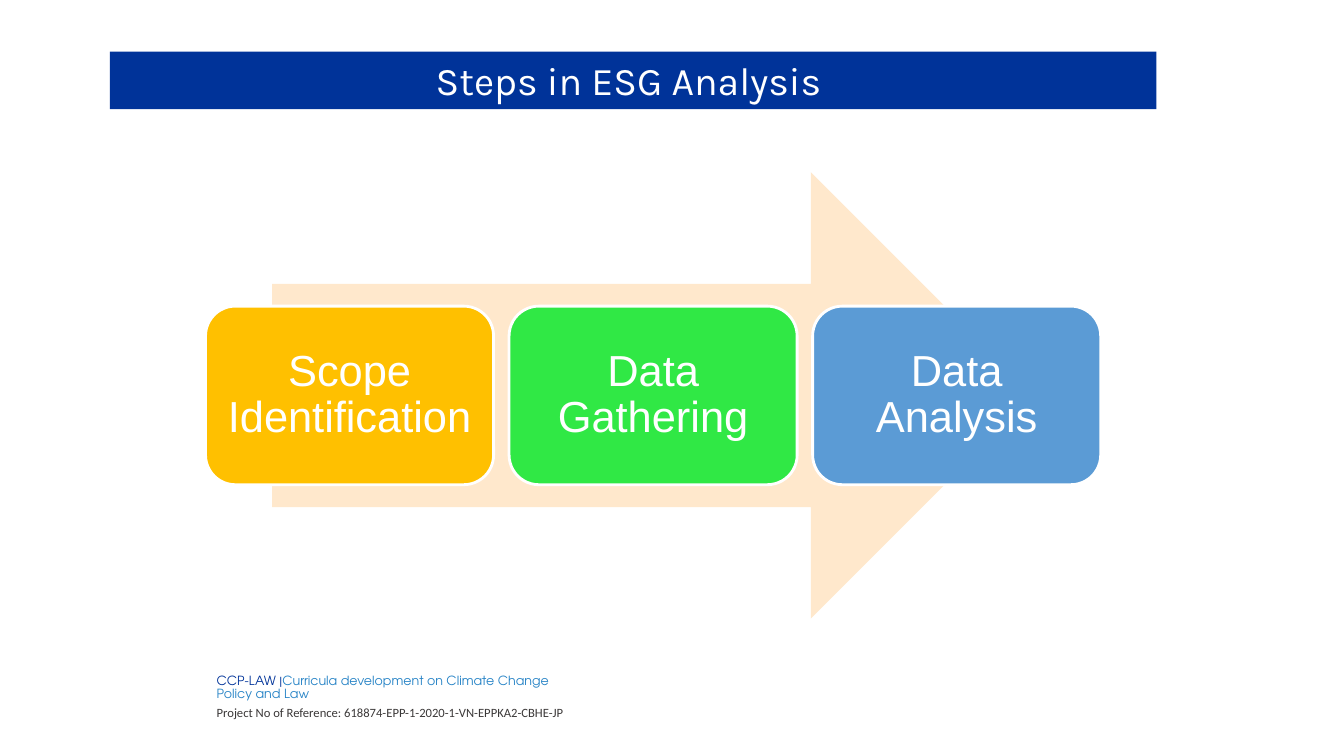
from pptx import Presentation
from pptx.dml.color import RGBColor
from pptx.enum.shapes import MSO_SHAPE
from pptx.enum.text import MSO_ANCHOR, MSO_AUTO_SIZE, PP_ALIGN
from pptx.util import Cm, Pt

ARROW, BOX = MSO_SHAPE.RIGHT_ARROW, MSO_SHAPE.ROUNDED_RECTANGLE
TOP, MIDDLE = MSO_ANCHOR.TOP, MSO_ANCHOR.MIDDLE
CENTER, NO_FIT = PP_ALIGN.CENTER, MSO_AUTO_SIZE.NONE

COLORS = {
    "navy": "003399", "blue": "2683C6", "gray": "3B3838", "white": "FFFFFF",
    "peach": "FFE8CC", "amber": "FFC000", "green": "30E845", "steel": "5B9BD5",
}
TITLE = "Steps in ESG Analysis "
STEPS = [
    ("Scope Identification", "amber"),
    ("Data Gathering", "green"),
    ("Data Analysis", "steel"),
]
FOOTER = [
    [("CCP-LAW |", "TeX Gyre Adventor", "navy"),
     ("Curricula development on Climate Change Policy and Law",
      "TeX Gyre Adventor", "blue")],
    [("Project No of Reference: 618874-EPP-1-2020-1-VN-EPPKA2-CBHE-JP",
      "Calibri", "gray")],
]

# Lengths in cm
TITLE_AT = (2.77, 1.3, 26.37, 1.45)
ARROW_AT = (6.86, 4.34, 19.2, 11.25)
FOOTER_AT = (3.3, 16.94, 11.48, 1.32)
FOOTER_COLS = (1.98, 9.5)
STEP_LEFT, STEP_W, STEP_H, STEP_PITCH = 5.18, 7.26, 4.5, 7.65


def rgb(name):
    return RGBColor.from_string(COLORS[name])


def set_attrs(obj, values):
    for name, value in values.items():
        setattr(obj, name, value)


def fill(obj, color):
    obj.fill.solid()
    obj.fill.fore_color.rgb = rgb(color)


def margins(x, y):
    return {"margin_left": Cm(x), "margin_right": Cm(x),
            "margin_top": Cm(y), "margin_bottom": Cm(y)}


def add_run(p, text, font, size, color):
    r = p.add_run()
    r.text = text
    set_attrs(r.font, {"name": font, "size": Pt(size), "bold": False})
    r.font.color.rgb = rgb(color)


def add_filled(s, kind, at, color):
    sp = s.shapes.add_shape(kind, *map(Cm, at))
    sp.shadow.inherit = False
    fill(sp, color)
    sp.line.fill.background()
    return sp


def add_title(s):
    sp = s.shapes.title
    set_attrs(sp, dict(zip(("left", "top", "width", "height"),
                           map(Cm, TITLE_AT))))
    fill(sp, "navy")
    tf = sp.text_frame
    set_attrs(tf, {"word_wrap": True, "auto_size": NO_FIT,
                   "vertical_anchor": TOP, **margins(0.25, 0.13)})
    p = tf.paragraphs[0]
    p.alignment = CENTER
    add_run(p, TITLE, "Karla", 28, "white")


def add_steps(s):
    add_filled(s, ARROW, ARROW_AT, "peach")
    top = ARROW_AT[1] + (ARROW_AT[3] - STEP_H) / 2
    for i, (label, color) in enumerate(STEPS):
        at = (STEP_LEFT + i * STEP_PITCH, top, STEP_W, STEP_H)
        sp = add_filled(s, BOX, at, color)
        sp.line.color.rgb = rgb("white")
        sp.line.width = Pt(2)
        tf = sp.text_frame
        set_attrs(tf, {"word_wrap": True, "vertical_anchor": MIDDLE,
                       **margins(0.3, 0.3)})
        p = tf.paragraphs[0]
        set_attrs(p, {"alignment": CENTER, "line_spacing": 0.9})
        add_run(p, label, "Arial", 31, "white")


def add_footer(s):
    table = s.shapes.add_table(1, len(FOOTER_COLS), *map(Cm, FOOTER_AT)).table
    set_attrs(table, {"first_row": False, "horz_banding": False})
    for col, width in zip(table.columns, FOOTER_COLS):
        col.width = Cm(width)
    for cell in table.iter_cells():
        cell.fill.background()
        set_attrs(cell, {"vertical_anchor": MIDDLE, **margins(0.18, 0)})
    tf = table.cell(0, 1).text_frame
    for i, runs in enumerate(FOOTER):
        p = tf.add_paragraph() if i else tf.paragraphs[0]
        p.line_spacing = 1.07
        if i:
            p.space_before = Pt(3)
        for text, font, color in runs:
            add_run(p, text, font, 9, color)


def main():
    prs = Presentation()
    set_attrs(prs, {"slide_width": Cm(33.87), "slide_height": Cm(19.05)})
    s = prs.slides.add_slide(prs.slide_layouts[5])
    add_title(s)
    add_steps(s)
    add_footer(s)
    prs.save("out.pptx")


if __name__ == "__main__":
    main()
